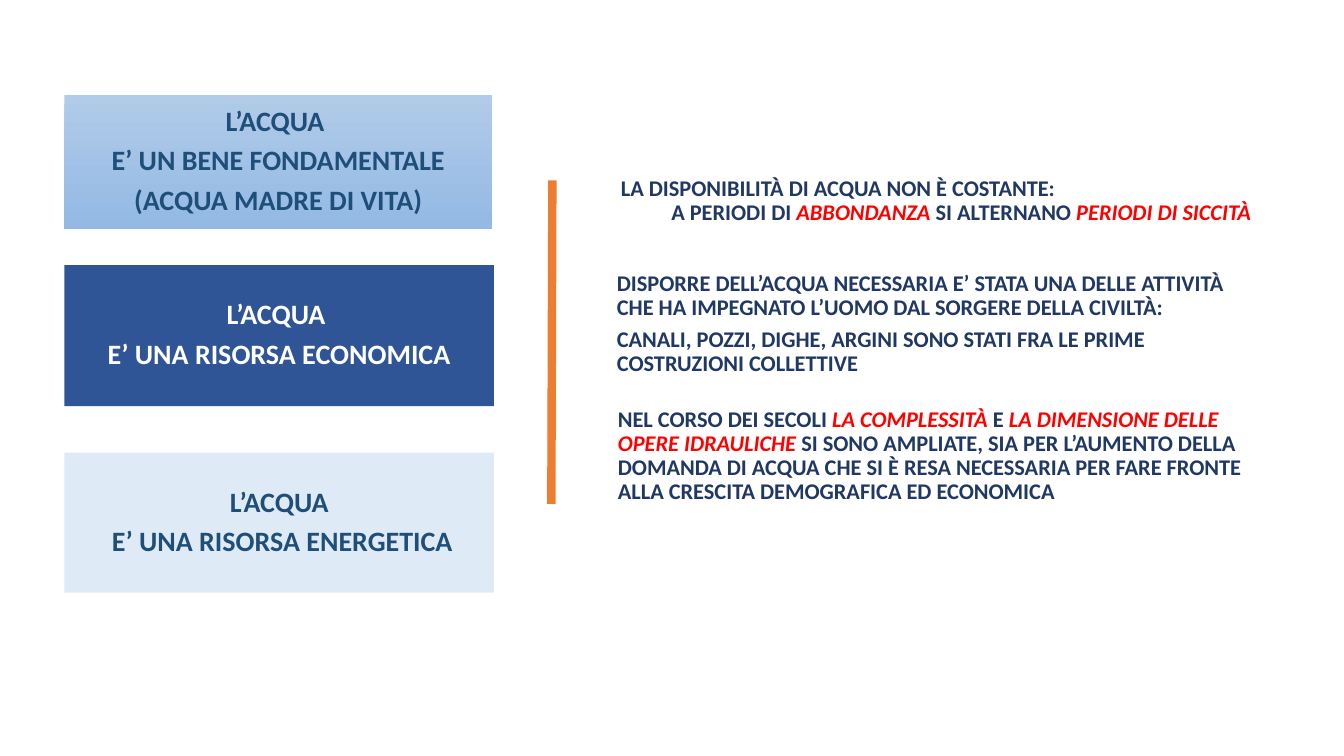
from dataclasses import dataclass

from lxml.etree import SubElement
from pptx import Presentation
from pptx.dml.color import RGBColor
from pptx.enum.shapes import MSO_CONNECTOR, MSO_SHAPE
from pptx.enum.text import MSO_ANCHOR, PP_ALIGN
from pptx.oxml.ns import qn
from pptx.slide import Slide
from pptx.text.text import TextFrame
from pptx.util import Pt

FONT = "Calibri"
NAVY, RED, TEAL, WHITE, ORANGE = "203864", "FF0000", "1F4E79", "FFFFFF", "ED7D31"
BOX_LEFT = 46.08


@dataclass
class Run:
    text: str
    color: str = NAVY
    italic: bool = False


@dataclass
class Line:
    runs: list[Run]
    indent: float = 0
    joined: bool = False  # no gap before the next paragraph


@dataclass
class WaterBox:
    top: float
    width: float
    height: float
    fills: list[str]  # two colours make a vertical gradient
    color: str
    lines: list[str]


@dataclass
class Note:
    left: float
    top: float
    width: float
    height: float
    lines: list[Line]


def highlight(text: str) -> Run:
    return Run(text, RED, True)


WATER_BOXES = [
    WaterBox(67.68, 305.28, 95.76, ["B1CBE9", "93B9E4"], TEAL,
             ["L’ACQUA ", "E’ UN BENE FONDAMENTALE", "(ACQUA MADRE DI VITA)"]),
    WaterBox(189.36, 306.72, 100.8, ["2F5597"], WHITE,
             ["L’ACQUA ", "E’ UNA RISORSA ECONOMICA"]),
    WaterBox(323.28, 306.72, 100.08, ["DEEBF7"], TEAL,
             ["L’ACQUA", " E’ UNA RISORSA ENERGETICA"]),
]

NOTES = [
    Note(439.92, 99.36, 486.72, 88.56, [
        Line([Run("LA DISPONIBILITÀ DI ACQUA NON È COSTANTE:")], joined=True),
        Line([Run("A PERIODI DI "), highlight("ABBONDANZA"),
              Run(" SI ALTERNANO "), highlight("PERIODI DI SICCITÀ")], indent=36),
    ]),
    Note(437.04, 191.52, 455.04, 79.92, [
        Line([Run("DISPORRE DELL’ACQUA NECESSARIA E’ STATA UNA DELLE ATTIVITÀ "
                  "CHE HA IMPEGNATO L’UOMO DAL SORGERE DELLA CIVILTÀ:")]),
        Line([Run("CANALI, POZZI, DIGHE, ARGINI SONO STATI FRA LE PRIME "
                  "COSTRUZIONI COLLETTIVE")]),
    ]),
    Note(437.76, 309.6, 471.6, 32.4, [
        Line([Run("NEL CORSO DEI SECOLI "), highlight("LA COMPLESSITÀ "), Run("E "),
              highlight("LA DIMENSIONE DELLE OPERE IDRAULICHE"),
              Run(" SI SONO AMPLIATE, SIA PER L’AUMENTO DELLA DOMANDA DI ACQUA CHE "
                  "SI È RESA NECESSARIA PER FARE FRONTE ALLA CRESCITA DEMOGRAFICA "
                  "ED ECONOMICA")]),
    ]),
]


def rgb(color: str) -> RGBColor:
    return RGBColor.from_string(color)


def write_lines(frame: TextFrame, lines: list[Line], size: float,
                alignment: PP_ALIGN, margin: float) -> None:
    frame.word_wrap = True
    frame.vertical_anchor = MSO_ANCHOR.MIDDLE
    frame.margin_left = frame.margin_right = Pt(margin)
    frame.margin_top = frame.margin_bottom = Pt(margin)
    for index, line in enumerate(lines):
        paragraph = frame.paragraphs[0] if index == 0 else frame.add_paragraph()
        paragraph.alignment = alignment
        paragraph.line_spacing = 0.9
        paragraph.space_after = Pt(0 if line.joined else size * 0.33)
        if line.indent:
            properties = paragraph._p.get_or_add_pPr()
            properties.set("marL", "0")
            properties.set("indent", str(Pt(line.indent)))
        for part in line.runs:
            run = paragraph.add_run()
            run.text = part.text
            run.font.name = FONT
            run.font.size = Pt(size)
            run.font.bold = True
            run.font.italic = part.italic
            run.font.color.rgb = rgb(part.color)


def add_water_box(slide: Slide, box: WaterBox) -> None:
    shape = slide.shapes.add_shape(MSO_SHAPE.RECTANGLE, Pt(BOX_LEFT), Pt(box.top),
                                   Pt(box.width), Pt(box.height))
    shape.shadow.inherit = False
    shape.line.fill.background()
    if len(box.fills) > 1:
        shape.fill.gradient()
        shape.fill.gradient_angle = 270
        for stop, color in zip(shape.fill.gradient_stops, box.fills):
            stop.color.rgb = rgb(color)
    else:
        shape.fill.solid()
        shape.fill.fore_color.rgb = rgb(box.fills[0])
    lines = [Line([Run(text, box.color)]) for text in box.lines]
    write_lines(shape.text_frame, lines, 20, PP_ALIGN.CENTER, 0.72)


def add_note(slide: Slide, note: Note) -> None:
    shape = slide.shapes.add_textbox(Pt(note.left), Pt(note.top),
                                     Pt(note.width), Pt(note.height))
    write_lines(shape.text_frame, note.lines, 16, PP_ALIGN.LEFT, 3.6)


def add_divider(slide: Slide) -> None:
    divider = slide.shapes.add_connector(MSO_CONNECTOR.STRAIGHT, Pt(394.56), Pt(128.88),
                                         Pt(393.84), Pt(360))
    divider.line.color.rgb = rgb(ORANGE)
    divider.line.width = Pt(6)
    SubElement(divider._element.spPr, qn("a:effectLst"))


def main() -> None:
    presentation = Presentation()
    presentation.slide_width, presentation.slide_height = Pt(960), Pt(540)
    slide = presentation.slides.add_slide(presentation.slide_layouts[6])

    # Left: the three roles of water
    for box in WATER_BOXES:
        add_water_box(slide, box)

    # Right: the explanatory notes
    for note in NOTES:
        add_note(slide, note)

    # Line between the two halves
    add_divider(slide)
    presentation.save("out.pptx")


if __name__ == "__main__":
    main()
